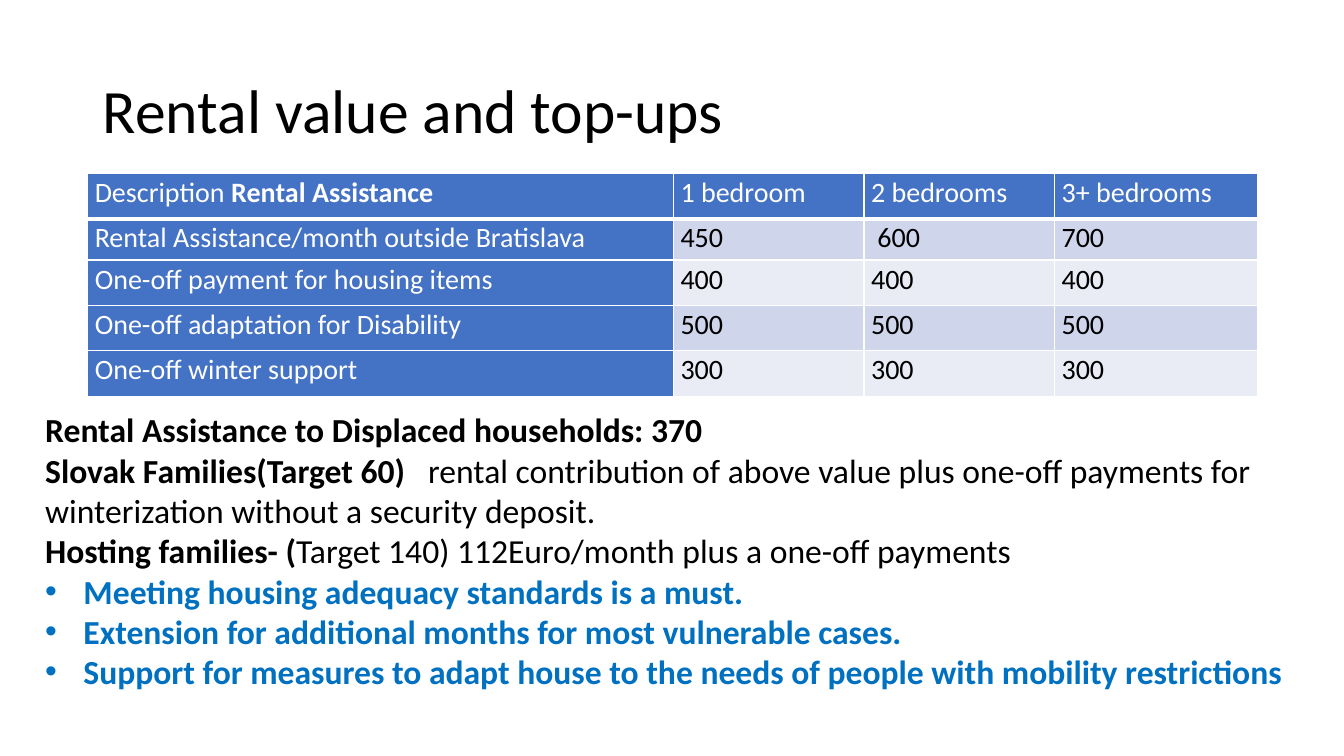
import pptx
import pptx.dml.color
import pptx.enum.text
import pptx.oxml
import pptx.oxml.ns
import pptx.util
from pptx.util import Inches

FONT = "Calibri"
BLACK, WHITE, BLUE, ACCENT = "000000", "FFFFFF", "4472C4", "0070C0"
BANDS = ("CFD5EA", "E9EBF5")

COLUMN_WIDTHS = (5.81, 1.89, 1.89, 2.01)
ROW_HEIGHTS = (0.45, 0.41, 0.45, 0.45, 0.45)

# Each text is a list of (words, bold) runs
HEADER = [
    [("Description ", False), ("Rental Assistance", True)],
    [("1 bedroom", False)],
    [("2 bedrooms", False)],
    [("3+ bedrooms", False)],
]
RATES = [
    ("Rental Assistance/month outside Bratislava", "450", " 600", "700"),
    ("One-off payment for housing items", "400", "400", "400"),
    ("One-off adaptation for Disability", "500", "500", "500"),
    ("One-off winter support", "300", "300", "300"),
]
NOTES = [
    [("Rental Assistance to Displaced households: 370", True)],
    [("Slovak Families(Target 60) ", True),
     ("  rental contribution of above value plus one-off payments for "
      "winterization without a security deposit.", False)],
    [("Hosting families- (", True),
     ("Target 140) 112Euro/month plus a one-off payments", False)],
]
BULLETS = [
    "Meeting housing adequacy standards is a must.",
    "Extension for additional months for most vulnerable cases.",
    "Support for measures to adapt house to the needs of people with mobility restrictions",
]


def color(value):
    return pptx.dml.color.RGBColor.from_string(value)


def write_runs(paragraph, runs, size, text_color):
    paragraph.font.name = FONT
    paragraph.font.size = pptx.util.Pt(size)
    paragraph.font.color.rgb = color(text_color)
    for words, bold in runs:
        run = paragraph.add_run()
        run.text = words
        run.font.bold = bold


def add_bullet(paragraph, indent):
    properties = paragraph._p.get_or_add_pPr()
    properties.set("marL", str(Inches(indent)))
    properties.set("indent", str(-Inches(indent)))
    namespace = pptx.oxml.ns.nsdecls("a")
    bullet_font = pptx.oxml.parse_xml(f'<a:buFont {namespace} typeface="Arial"/>')
    bullet = pptx.oxml.parse_xml(f'<a:buChar {namespace} char="•"/>')
    # Bullet elements come before the default run properties
    properties.insert_element_before(bullet_font, "a:defRPr")
    properties.insert_element_before(bullet, "a:defRPr")


def set_borders(cell, top, bottom):
    widths = {"lnL": 1, "lnR": 1, "lnT": top, "lnB": bottom}
    for position, (side, width) in enumerate(widths.items()):
        line = pptx.oxml.parse_xml(
            f'<a:{side} {pptx.oxml.ns.nsdecls("a")} w="{pptx.util.Pt(width)}">'
            f'<a:solidFill><a:srgbClr val="{WHITE}"/></a:solidFill></a:{side}>')
        cell._tc.get_or_add_tcPr().insert(position, line)


def format_cell(cell, runs, fill, text_color):
    cell.margin_left = cell.margin_right = Inches(0.07)
    cell.margin_top = cell.margin_bottom = 0
    cell.fill.solid()
    cell.fill.fore_color.rgb = color(fill)
    paragraph = cell.text_frame.paragraphs[0]
    paragraph.line_spacing = 1.07
    write_runs(paragraph, runs, 20, text_color)


def add_title(slide, text):
    title = slide.shapes.title
    title.left, title.top = Inches(0.92), Inches(0.4)
    title.width, title.height = Inches(11.5), Inches(1.45)
    title.text_frame.vertical_anchor = pptx.enum.text.MSO_ANCHOR.MIDDLE
    paragraph = title.text_frame.paragraphs[0]
    paragraph.alignment = pptx.enum.text.PP_ALIGN.LEFT
    paragraph.line_spacing = 0.9
    write_runs(paragraph, [(text, False)], 44, BLACK)


def add_rates_table(slide):
    rows = [HEADER] + [[[(text, False)] for text in rate] for rate in RATES]
    table = slide.shapes.add_table(
        len(rows), len(COLUMN_WIDTHS), Inches(0.87), Inches(1.72),
        Inches(sum(COLUMN_WIDTHS)), Inches(sum(ROW_HEIGHTS))).table
    for column, width in zip(table.columns, COLUMN_WIDTHS):
        column.width = Inches(width)
    for row, height in zip(table.rows, ROW_HEIGHTS):
        row.height = Inches(height)

    for row_index, row in enumerate(rows):
        for column_index, runs in enumerate(row):
            cell = table.cell(row_index, column_index)
            is_heading = row_index == 0 or column_index == 0
            fill = BLUE if is_heading else BANDS[(row_index - 1) % 2]
            format_cell(cell, runs, fill, WHITE if is_heading else BLACK)
            # A thicker rule separates the header from the rates
            set_borders(cell, top=3 if row_index == 1 else 1,
                        bottom=3 if row_index == 0 else 1)


def add_notes_text(slide):
    box = slide.shapes.add_textbox(Inches(0.35), Inches(4.01), Inches(12.6), Inches(2.93))
    frame = box.text_frame
    frame.word_wrap = True
    frame.auto_size = pptx.enum.text.MSO_AUTO_SIZE.SHAPE_TO_FIT_TEXT
    bullet_runs = [[(text, True)] for text in BULLETS]
    for index, runs in enumerate(NOTES + bullet_runs):
        paragraph = frame.add_paragraph() if index else frame.paragraphs[0]
        is_bullet = index >= len(NOTES)
        write_runs(paragraph, runs, 24, ACCENT if is_bullet else BLACK)
        if is_bullet:
            add_bullet(paragraph, 0.38)


def main():
    presentation = pptx.Presentation()
    presentation.slide_width = Inches(13.33)
    presentation.slide_height = Inches(7.5)
    # Title-only layout
    slide = presentation.slides.add_slide(presentation.slide_layouts[5])

    add_title(slide, "Rental value and top-ups")
    add_rates_table(slide)
    add_notes_text(slide)
    presentation.save("out.pptx")


if __name__ == "__main__":
    main()
